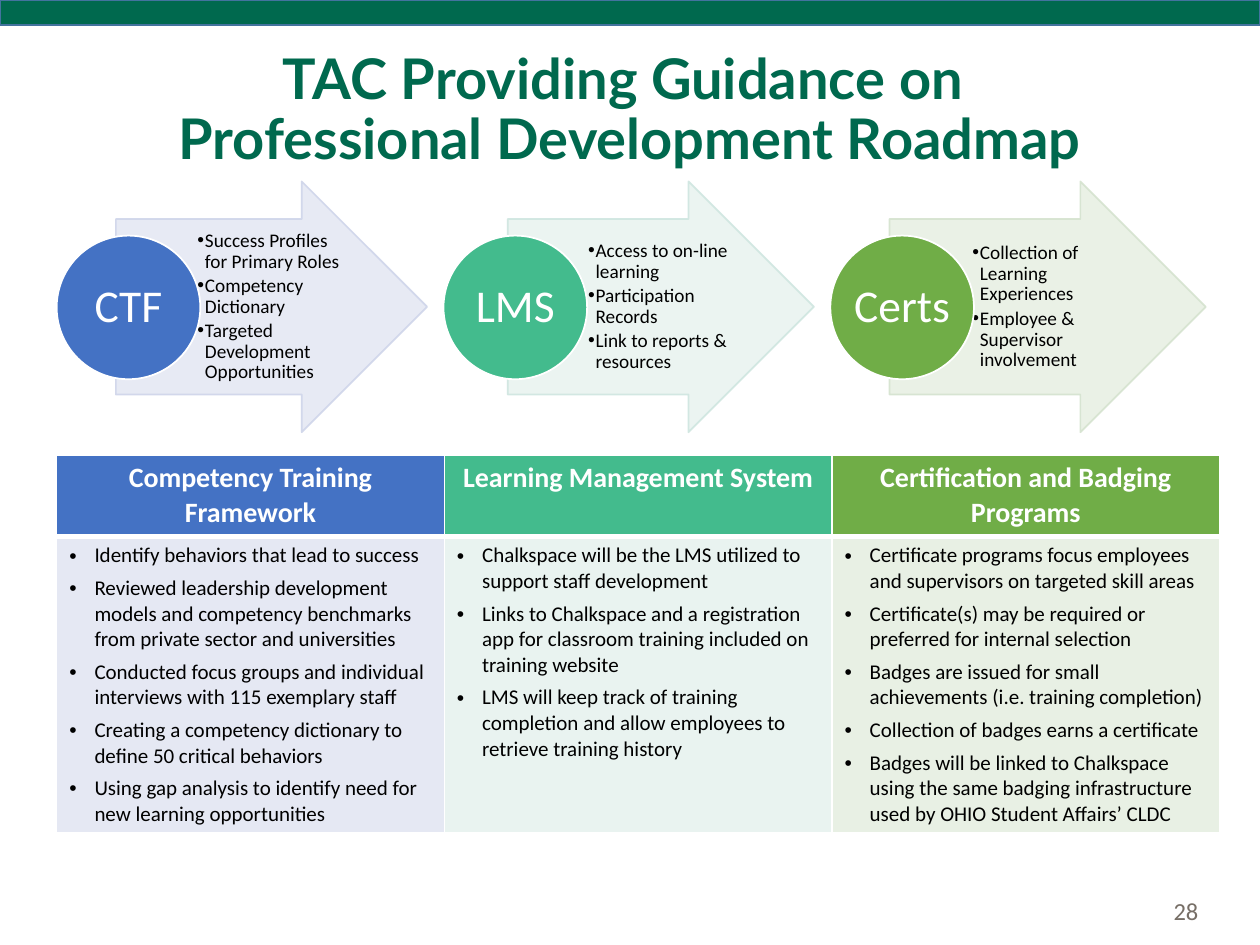
from dataclasses import dataclass

import lxml.etree
import pptx
import pptx.dml.color
import pptx.enum.shapes
import pptx.enum.text
import pptx.oxml
import pptx.oxml.ns
import pptx.util

Inches = pptx.util.Inches
Pt = pptx.util.Pt
Align = pptx.enum.text.PP_ALIGN
Kind = pptx.enum.shapes.MSO_SHAPE
tag = pptx.oxml.ns.qn

HUES = {
    "green": "00694E", "edge": "43739E", "gray": "776F67",
    "white": "FFFFFF", "black": "000000",
}


@dataclass
class Font:
    size: float
    hue: str
    bold: bool = False
    face: str = "Calibri"


@dataclass
class Stage:
    name: str
    head: str
    dark: str
    pale: str
    rim: str
    left: float
    width: float
    notes: list[str]
    points: list[str]


STAGES = [
    Stage("CTF", "Competency Training Framework", "4472C4", "E5E8F3", "CFD5EA", 0.92, 2.47,
          ["Success Profiles for Primary Roles", "Competency Dictionary",
           "Targeted Development Opportunities"],
          ["Identify behaviors that lead to success",
           "Reviewed leadership development models and competency benchmarks "
           "from private sector and universities",
           "Conducted focus groups and individual interviews with 115 exemplary staff",
           "Creating a competency dictionary to define 50 critical behaviors",
           "Using gap analysis to identify need for new learning opportunities"]),
    Stage("LMS", "Learning Management System", "43BB8D", "E9F3F0", "CFE6E0", 4.03, 2.43,
          ["Access to on-line learning", "Participation Records", "Link to reports & resources"],
          ["Chalkspace will be the LMS utilized to support staff development",
           "Links to Chalkspace and a registration app for classroom training "
           "included on training website",
           "LMS will keep track of training completion and allow employees to "
           "retrieve training history"]),
    Stage("Certs", "Certification and Badging Programs", "70AD47", "E8F0E4", "D5E3CF", 7.06, 2.51,
          ["Collection of Learning Experiences", "Employee & Supervisor involvement"],
          ["Certificate programs focus employees and supervisors on targeted skill areas",
           "Certificate(s) may be required or preferred for internal selection",
           "Badges are issued for small achievements (i.e. training completion)",
           "Collection of badges earns a certificate",
           "Badges will be linked to Chalkspace using the same badging infrastructure "
           "used by OHIO Student Affairs’ CLDC"]),
]


def tint(code: str):
    return pptx.dml.color.RGBColor.from_string(code)


def write(frame, text: str, font: Font, align=Align.LEFT, lines: float = 1.0,
          after: float = 0, hang: float = 0) -> None:
    frame.word_wrap = True
    frame.text = text
    for para in frame.paragraphs:
        para.alignment = align
        para.line_spacing = lines
        para.space_after = Pt(after)
        if hang:
            props = para._p.get_or_add_pPr()
            props.set("marL", str(Inches(hang)))
            props.set("indent", str(-Inches(hang)))
            lxml.etree.SubElement(props, tag("a:buFont"), typeface="Arial")
            lxml.etree.SubElement(props, tag("a:buChar"), char="•")
        for run in para.runs:
            run.font.size = Pt(font.size)
            run.font.name = font.face
            run.font.bold = font.bold
            run.font.color.rgb = tint(font.hue)


def add_text(slide, box: tuple, text: str, font: Font, pads: tuple = (0.1, 0.05, 0.1, 0.05),
             **style) -> None:
    frame = slide.shapes.add_textbox(*map(Inches, box)).text_frame
    frame.vertical_anchor = pptx.enum.text.MSO_ANCHOR.MIDDLE
    (frame.margin_left, frame.margin_top,
     frame.margin_right, frame.margin_bottom) = map(Inches, pads)
    write(frame, text, font, **style)


def add_form(slide, kind, box: tuple, fill: str, line: str):
    form = slide.shapes.add_shape(kind, *map(Inches, box))
    form.shadow.inherit = False
    form.fill.solid()
    form.fill.fore_color.rgb = tint(fill)
    form.line.color.rgb = tint(line)
    form.line.width = Pt(1)
    return form


def add_stage(slide, stage: Stage, left: float) -> None:
    arrow = add_form(slide, Kind.RIGHT_ARROW, (stage.left, 1.44, stage.width, 1.99),
                     stage.pale, stage.rim)
    arrow.adjustments[0] = 0.7
    arrow.adjustments[1] = 0.5
    for shade in arrow._element.spPr.iter(tag("a:srgbClr")):
        lxml.etree.SubElement(shade, tag("a:alpha"), val="90000")
    add_text(slide, (stage.left + stage.width / 4, 1.74, stage.width * 0.49, 1.39),
             "\n".join(stage.notes), Font(11, HUES["black"]),
             (0.03, 0.01, 0.02, 0.01), lines=0.9, after=2, hang=0.06)
    add_form(slide, Kind.OVAL, (left, 1.87, 1.14, 1.14), stage.dark, HUES["white"])
    add_text(slide, (left + 0.15, 2.04, 0.84, 0.8), stage.name, Font(26, HUES["white"]),
             (0,) * 4, align=Align.CENTER, lines=0.9)


def paint(cell, fill: str, top: float, base: float) -> None:
    props = cell._tc.get_or_add_tcPr()
    for side, width in zip("LRTB", (1, 1, top, base)):
        edge = lxml.etree.SubElement(props, tag(f"a:ln{side}"), w=str(Pt(width)))
        solid = lxml.etree.SubElement(edge, tag("a:solidFill"))
        lxml.etree.SubElement(solid, tag("a:srgbClr"), val=HUES["white"])
    cell.fill.solid()
    cell.fill.fore_color.rgb = tint(fill)


def add_grid(slide, stages: list[Stage]) -> None:
    box = map(Inches, (0.45, 3.61, 9.23, 3))
    grid = slide.shapes.add_table(2, len(stages), *box).table
    for row, height in zip(grid.rows, (0.65, 2.35)):
        row.height = Inches(height)
    for col, stage in enumerate(stages):
        head, body = grid.cell(0, col), grid.cell(1, col)
        write(head.text_frame, stage.head, Font(16, HUES["white"], True), Align.CENTER)
        paint(head, stage.dark, 1, 3)
        write(body.text_frame, "\n".join(stage.points), Font(12, HUES["black"]),
              after=4, hang=0.2)
        paint(body, stage.pale, 3, 1)


def main() -> None:
    deck = pptx.Presentation()
    deck.slide_width, deck.slide_height = Inches(10), Inches(7.5)
    slide = deck.slides.add_slide(deck.slide_layouts[6])
    add_text(slide, (6.61, 7.03, 3, 0.4), "28", Font(14, HUES["gray"]), align=Align.RIGHT)
    add_form(slide, Kind.RECTANGLE, (0, 0, 10, 0.2), HUES["green"], HUES["edge"])
    add_text(slide, (0, 0.16, 10, 1.45),
             "TAC Providing Guidance on \vProfessional Development Roadmap",
             Font(32, HUES["green"], True, "Lato"), align=Align.CENTER, lines=0.9)
    for place, stage in enumerate(STAGES):
        add_stage(slide, stage, 0.45 + 3.07 * place)
    add_grid(slide, STAGES)
    deck.save("out.pptx")


if __name__ == "__main__":
    main()
